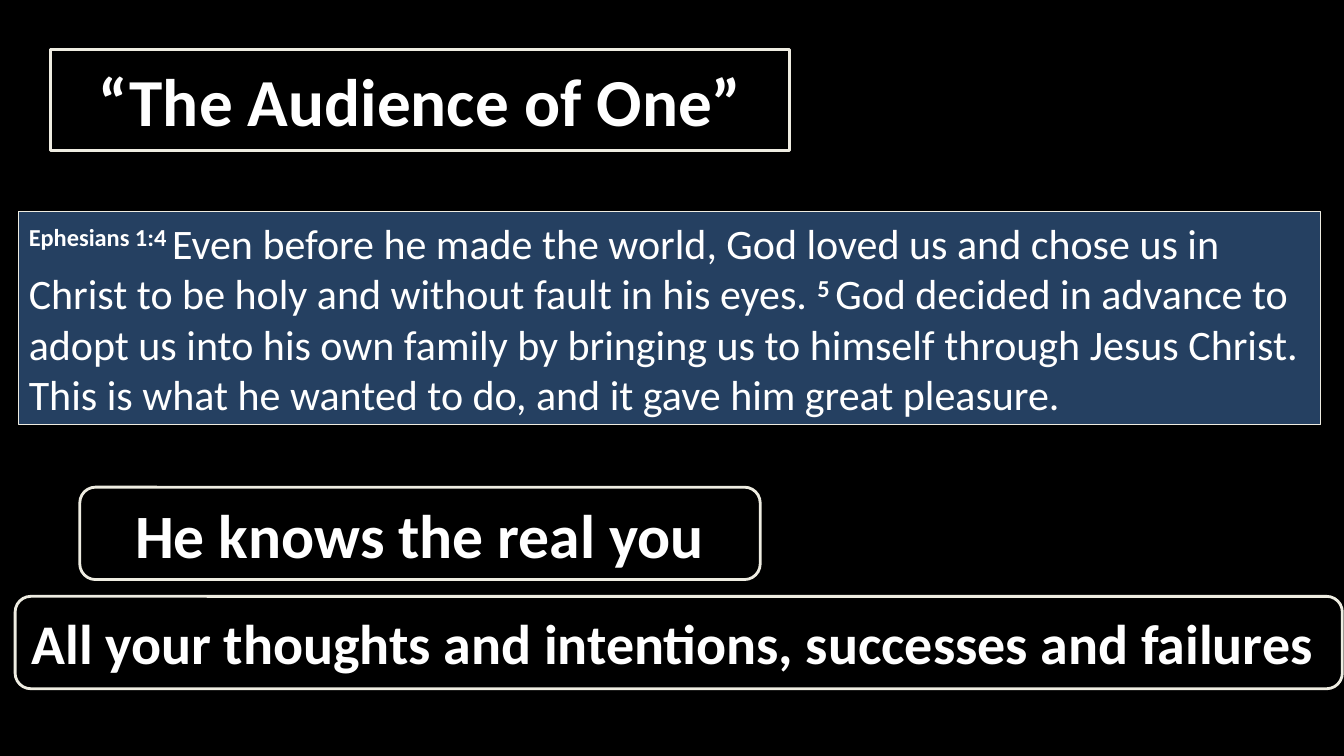
from dataclasses import dataclass

from lxml import etree
from pptx import Presentation
from pptx.dml.color import RGBColor
from pptx.enum.shapes import MSO_SHAPE
from pptx.enum.text import MSO_ANCHOR, MSO_AUTO_SIZE, PP_ALIGN
from pptx.oxml.ns import qn
from pptx.shapes.autoshape import Shape
from pptx.slide import Slide
from pptx.util import Inches, Pt

CALLOUT = MSO_SHAPE.ROUNDED_RECTANGULAR_CALLOUT
RECTANGLE = MSO_SHAPE.RECTANGLE
MIDDLE = MSO_ANCHOR.MIDDLE
CENTER = PP_ALIGN.CENTER
LEFT = PP_ALIGN.LEFT
FIXED_SIZE = MSO_AUTO_SIZE.NONE
GROW = MSO_AUTO_SIZE.SHAPE_TO_FIT_TEXT

SLIDE_WIDTH = Inches(13.33)
SLIDE_HEIGHT = Inches(7.5)
COLUMN = SLIDE_WIDTH / 160
ROW = SLIDE_HEIGHT / 90
TITLE_ONLY = 5
FONT = "Calibri"
CALLOUT_ADJUSTMENTS = (-0.22, 0.5, 0.17)
COLORS = {"black": "000000", "navy": "254061", "cream": "EEECE1", "white": "FFFFFF"}


@dataclass(frozen=True)
class Box:
    column: float
    row: float
    columns: float
    rows: float


@dataclass(frozen=True)
class Callout:
    text: str
    size: int
    box: Box


@dataclass(frozen=True)
class VersePart:
    text: str
    is_marker: bool = False


TITLE = Callout("“The Audience of One”", 48, Box(6, 5.9, 88, 12))
POINTS = (
    Callout("He knows the real you", 44, Box(9.5, 58, 81, 11)),
    Callout("All your thoughts and intentions, successes and failures ", 40, Box(1.8, 71, 158, 11)),
)
VERSE_BOX = Box(2.25, 25.2, 155, 25.4)
VERSE = (
    VersePart("Ephesians 1:4 ", is_marker=True),
    VersePart(
        "Even before he made the world, God loved us and chose us in "
        "Christ to be holy and without fault in his eyes. "
    ),
    VersePart("5 ", is_marker=True),
    VersePart(
        "God decided in advance to adopt us into his own family by bringing us "
        "to himself through Jesus Christ. This is what he wanted to do, "
        "and it gave him great pleasure."
    ),
)


def color(name: str) -> RGBColor:
    return RGBColor.from_string(COLORS[name])


def grid_position(box: Box) -> tuple[int, int, int, int]:
    return (
        round(box.column * COLUMN),
        round(box.row * ROW),
        round(box.columns * COLUMN),
        round(box.rows * ROW),
    )


def paint(shape: Shape, fill: str, line_width: float) -> None:
    shape.shadow.inherit = False
    shape.fill.solid()
    shape.fill.fore_color.rgb = color(fill)
    shape.line.color.rgb = color("cream")
    shape.line.width = Pt(line_width)


def format_callout(shape: Shape, callout: Callout) -> None:
    for index, value in enumerate(CALLOUT_ADJUSTMENTS):
        shape.adjustments[index] = value
    paint(shape, "black", 2)
    frame = shape.text_frame
    frame.word_wrap = True
    frame.auto_size = FIXED_SIZE
    frame.vertical_anchor = MIDDLE
    paragraph = frame.paragraphs[0]
    paragraph.text = callout.text
    paragraph.alignment = CENTER
    paragraph.font.name = FONT
    paragraph.font.size = Pt(callout.size)
    paragraph.font.bold = True
    paragraph.font.color.rgb = color("white")


def add_title(slide: Slide, callout: Callout) -> None:
    title = slide.shapes.title
    title.left, title.top, title.width, title.height = grid_position(callout.box)
    geometry = etree.SubElement(title.element.spPr, qn("a:prstGeom"), prst="wedgeRoundRectCallout")
    etree.SubElement(geometry, qn("a:avLst"))
    format_callout(title, callout)


def add_callout(slide: Slide, callout: Callout) -> None:
    shape = slide.shapes.add_shape(CALLOUT, *grid_position(callout.box))
    format_callout(shape, callout)


def add_verse(slide: Slide, parts: tuple[VersePart, ...], box: Box) -> None:
    shape = slide.shapes.add_shape(RECTANGLE, *grid_position(box))
    paint(shape, "navy", 0.75)
    frame = shape.text_frame
    frame.word_wrap = True
    frame.auto_size = GROW
    paragraph = frame.paragraphs[0]
    paragraph.alignment = LEFT
    paragraph.font.name = FONT
    paragraph.font.size = Pt(30)
    paragraph.font.color.rgb = color("white")
    for part in parts:
        run = paragraph.add_run()
        run.text = part.text
        run.font.bold = part.is_marker
        if part.is_marker:
            run._r.get_or_add_rPr().set("baseline", "30000")


def main() -> None:
    presentation = Presentation()
    presentation.slide_width = SLIDE_WIDTH
    presentation.slide_height = SLIDE_HEIGHT
    slide = presentation.slides.add_slide(presentation.slide_layouts[TITLE_ONLY])
    slide.background.fill.solid()
    slide.background.fill.fore_color.rgb = color("black")
    add_title(slide, TITLE)
    for point in POINTS:
        add_callout(slide, point)
    add_verse(slide, VERSE, VERSE_BOX)
    presentation.save("out.pptx")


if __name__ == "__main__":
    main()
